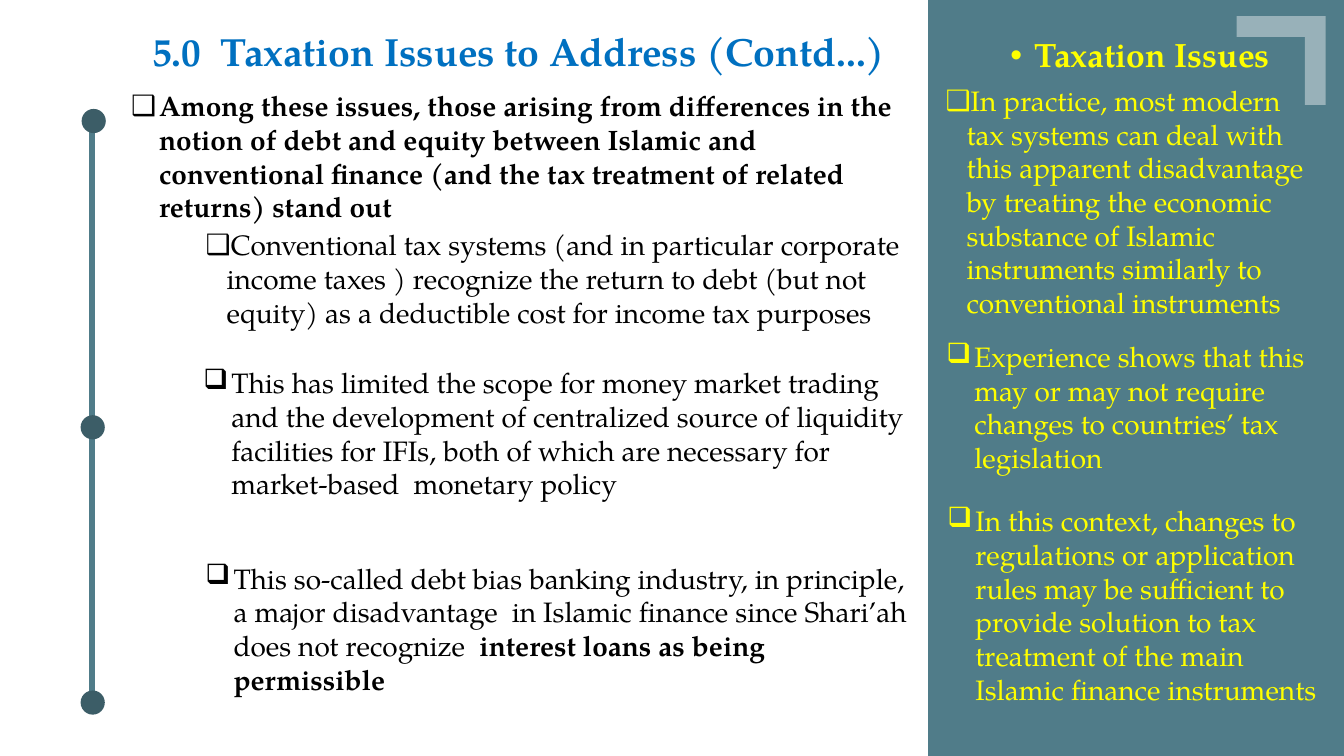
"""Build the slide on taxation issues in Islamic finance."""
import dataclasses
import itertools

import lxml.etree
import pptx
import pptx.dml.color
import pptx.enum.shapes
import pptx.enum.text
import pptx.oxml.ns
import pptx.util

Pt = pptx.util.Pt
RGBColor = pptx.dml.color.RGBColor
MSO_SHAPE = pptx.enum.shapes.MSO_SHAPE
PP_ALIGN = pptx.enum.text.PP_ALIGN
qn = pptx.oxml.ns.qn

FONT = "TeX Gyre Pagella"
TEAL = RGBColor(0x50, 0x7C, 0x89)
DARK_TEAL = RGBColor(0x3C, 0x5D, 0x67)
WHITE = RGBColor(0xFF, 0xFF, 0xFF)
BLACK = RGBColor(0x00, 0x00, 0x00)
BLUE = RGBColor(0x00, 0x70, 0xC0)
YELLOW = RGBColor(0xFF, 0xFF, 0x00)


@dataclasses.dataclass(frozen=True)
class Box:
    left: float
    top: float
    width: float
    height: float


@dataclasses.dataclass(frozen=True)
class Span:
    text: str
    bold: bool = False


@dataclasses.dataclass(frozen=True)
class Passage:
    box: Box
    spans: tuple[Span, ...]
    color: RGBColor
    hang: float = 20
    bullet: str = "❑"
    size: float = 20
    align: PP_ALIGN = PP_ALIGN.LEFT


HEADLINE = Passage(
    Box(84.3, 15.8, 572.4, 41),
    (Span("5.0  Taxation Issues to Address (Contd...)", True),),
    BLUE, hang=0, bullet="", size=28, align=PP_ALIGN.CENTER)

PASSAGES = (
    Passage(Box(86.4, 59.8, 573.8, 104.4), (Span(
        "Among these issues, those arising from differences in the\n"
        "notion of debt and equity between Islamic and\n"
        "conventional finance (and the tax treatment of related\n"
        "returns) stand out", True),), BLACK),
    Passage(Box(139.7, 159.1, 513.4, 79.9), (Span(
        "Conventional tax systems (and in particular corporate\n"
        "income taxes ) recognize the return to debt (but not\n"
        "equity) as a deductible cost for income tax purposes"),), BLACK, hang=15),
    Passage(Box(668.9, 20.9, 290.9, 36), (Span("Taxation Issues", True),),
            YELLOW, hang=17, bullet="•", size=24, align=PP_ALIGN.CENTER),
    Passage(Box(668.2, 56.2, 276.5, 200.9), (Span(
        "In practice, most modern\n"
        "tax systems can deal with\n"
        "this apparent disadvantage\n"
        "by treating the economic\n"
        "substance of Islamic\n"
        "instruments similarly to\n"
        "conventional instruments"),), YELLOW, hang=15),
    Passage(Box(138.2, 257.8, 524.2, 104.4), (Span(
        "This has limited the scope for money market trading\n"
        "and the development of centralized source of liquidity\n"
        "facilities for IFIs, both of which are necessary for\n"
        "market-based  monetary policy"),), BLACK),
    Passage(Box(139.7, 397.4, 524.9, 104.4), (
        Span("This so-called debt bias banking industry, in principle,\n"
             "a major disadvantage  in Islamic finance since Shari’ah\n"
             "does not recognize  "),
        Span("interest loans as being\npermissible", True)), BLACK),
    Passage(Box(668.9, 239, 276.5, 104.4), (Span(
        "Experience shows that this\n"
        "may or may not require\n"
        "changes to countries’ tax\n"
        "legislation"),), YELLOW),
    Passage(Box(669.6, 356.4, 290.2, 152.6), (Span(
        "In this context, changes to\n"
        "regulations or application\n"
        "rules may be sufficient to\n"
        "provide solution to tax\n"
        "treatment of the main\n"
        "Islamic finance instruments"),), YELLOW),
)

SIDEBAR = Box(663, 0, 297, 540)
CORNER = Box(883.4, 11.5, 63.4, 63.4)
RAIL_X, RAIL_TOP, RAIL_BOTTOM = 65.5, 84.2, 504
DOT_SIZE = 17.3
DOTS = ((58.3, 77.8), (57.6, 296.6), (57.6, 493.2))


def draw_shape(slide, kind: MSO_SHAPE, box: Box, color: RGBColor):
    """Draw a filled preset shape without outline."""
    shape = slide.shapes.add_shape(
        kind, Pt(box.left), Pt(box.top), Pt(box.width), Pt(box.height))
    shape.shadow.inherit = False
    shape.fill.solid()
    shape.fill.fore_color.rgb = color
    shape.line.fill.background()
    return shape


def draw_rail(slide) -> None:
    """Draw the vertical line that carries the dots."""
    rail = slide.shapes.add_connector(
        pptx.enum.shapes.MSO_CONNECTOR.STRAIGHT,
        Pt(RAIL_X), Pt(RAIL_TOP), Pt(RAIL_X), Pt(RAIL_BOTTOM))
    rail.line.color.rgb = TEAL
    rail.line.width = Pt(4.5)
    lxml.etree.SubElement(rail._element.spPr, qn("a:effectLst"))


def write_passage(holder, passage: Passage) -> None:
    """Place a text holder and fill it with one hanging paragraph."""
    box = passage.box
    holder.left, holder.top = Pt(box.left), Pt(box.top)
    holder.width, holder.height = Pt(box.width), Pt(box.height)
    frame = holder.text_frame
    frame.word_wrap = True
    frame.auto_size = pptx.enum.text.MSO_AUTO_SIZE.SHAPE_TO_FIT_TEXT
    frame.vertical_anchor = pptx.enum.text.MSO_ANCHOR.TOP
    paragraph = frame.paragraphs[0]
    paragraph.alignment = passage.align
    paragraph.line_spacing = 1.0
    paragraph.space_before = paragraph.space_after = Pt(0)
    properties = paragraph._p.get_or_add_pPr()
    properties.set("marL", str(int(Pt(passage.hang))))
    properties.set("indent", str(-int(Pt(passage.hang))))
    if passage.bullet:
        lxml.etree.SubElement(properties, qn("a:buChar"), char=passage.bullet)
    for span in passage.spans:
        for number, line in enumerate(span.text.split("\n")):
            if number:
                paragraph.add_line_break()
            run = paragraph.add_run()
            run.text = line
            run.font.name = FONT
            run.font.size = Pt(passage.size)
            run.font.bold = span.bold
            run.font.color.rgb = passage.color


def main() -> None:
    """Draw the slide and save it."""
    deck = pptx.Presentation()
    deck.slide_width, deck.slide_height = Pt(960), Pt(540)
    slide = deck.slides.add_slide(deck.slide_layouts.get_by_name("Comparison"))
    title, *bodies = list(slide.placeholders)

    draw_shape(slide, MSO_SHAPE.RECTANGLE, SIDEBAR, TEAL)
    draw_rail(slide)
    corner = draw_shape(slide, MSO_SHAPE.CORNER, CORNER, WHITE)
    corner.rotation = 180
    corner.adjustments[0] = corner.adjustments[1] = 0.234
    tint = corner.element.spPr.find(qn("a:solidFill")).find(qn("a:srgbClr"))
    lxml.etree.SubElement(tint, qn("a:alpha"), val="41000")
    for left, top in DOTS:
        draw_shape(slide, MSO_SHAPE.OVAL, Box(left, top, DOT_SIZE, DOT_SIZE), DARK_TEAL)

    for placeholder in (title, *bodies):
        placeholder.element.getparent().append(placeholder.element)
    write_passage(title, HEADLINE)
    for passage, body in itertools.zip_longest(PASSAGES, bodies):
        write_passage(body or slide.shapes.add_textbox(0, 0, 0, 0), passage)
    deck.save("out.pptx")


if __name__ == "__main__":
    main()
